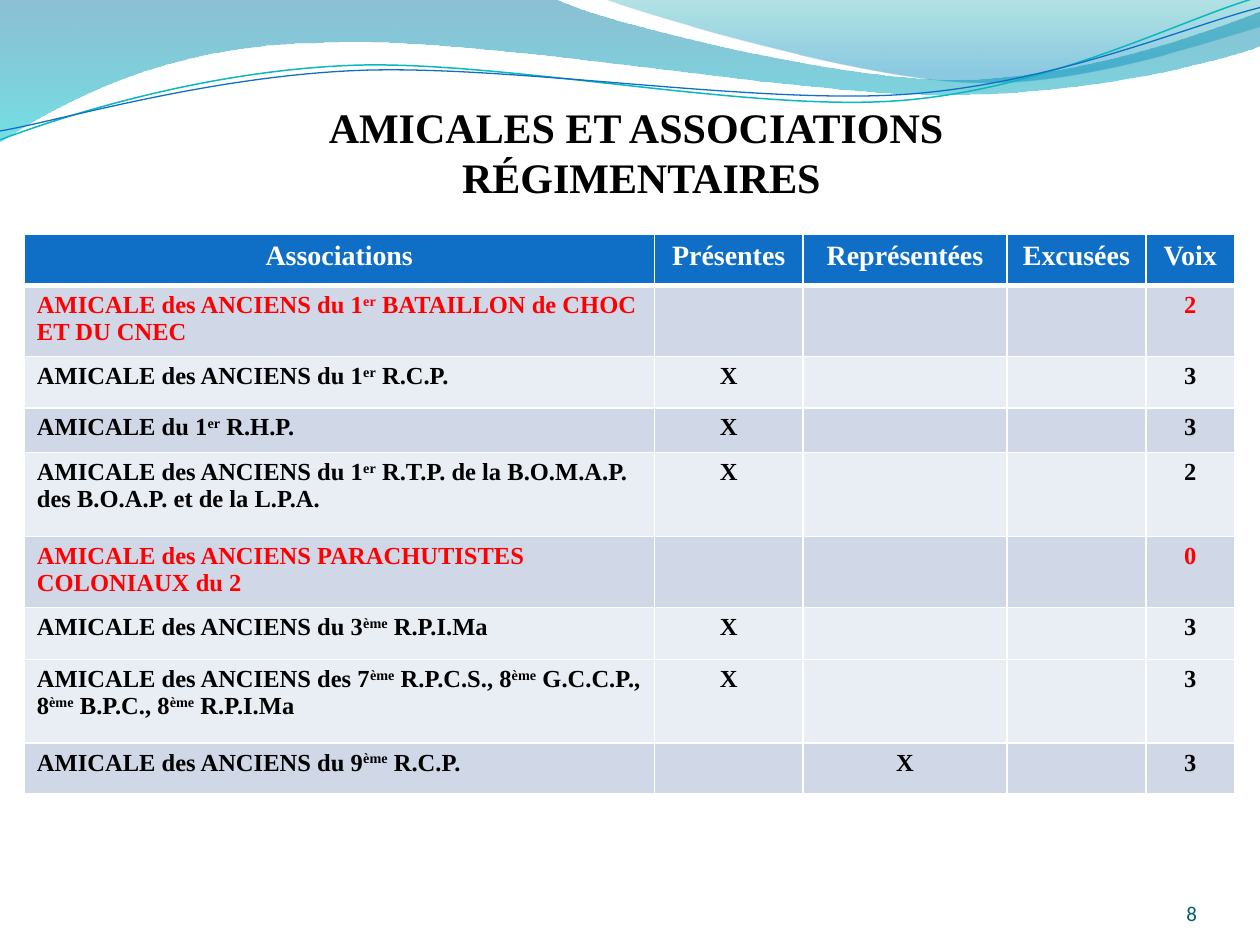
import pptx
import pptx.util
import pptx.dml.color
import pptx.enum.text
import pptx.oxml
import pptx.oxml.ns
from pptx.util import Cm

TITLE = ["AMICALES ET ASSOCIATIONS ", "RÉGIMENTAIRES"]
PAGE_NUMBER = "8"
HEADERS = ["Associations", "Présentes", "Représentées", "Excusées", "Voix"]
BLACK, RED, WHITE = "000000", "FF0000", "FFFFFF"
DARK_BAND, LIGHT_BAND, BLUE = "D0D8E8", "E9EDF4", "0F6FC6"
ASSOCIATIONS = [
    ("AMICALE des ANCIENS du 1^er^ BATAILLON de CHOC ET DU CNEC", None, "2", RED, DARK_BAND),
    ("AMICALE des ANCIENS du 1^er^ R.C.P.", "Présentes", "3", BLACK, LIGHT_BAND),
    ("AMICALE du 1^er^ R.H.P.", "Présentes", "3", BLACK, DARK_BAND),
    ("AMICALE des ANCIENS du 1^er^ R.T.P. de la B.O.M.A.P. des B.O.A.P. et de la L.P.A.",
     "Présentes", "2", BLACK, LIGHT_BAND),
    ("AMICALE des ANCIENS PARACHUTISTES COLONIAUX du 2", None, "0", RED, DARK_BAND),
    ("AMICALE des ANCIENS du 3^ème^ R.P.I.Ma", "Présentes", "3", BLACK, LIGHT_BAND),
    ("AMICALE des ANCIENS des 7^ème^ R.P.C.S., 8^ème^ G.C.C.P., 8^ème^ B.P.C., 8^ème^ R.P.I.Ma",
     "Présentes", "3", BLACK, LIGHT_BAND),
    ("AMICALE des ANCIENS du 9^ème^ R.C.P.", "Représentées", "3", BLACK, DARK_BAND),
]
COLUMN_WIDTHS = [12.7, 3, 4.11, 2.8, 1.79]
ROW_HEIGHTS = [1.03, 1.43, 1.03, 0.9, 1.7, 1.43, 1.04, 1.69, 1.03]

CURVE_UNIT = Cm(2.54)
WAVES = [
    ((0, -0.01),
     [[(4.4, -0.01)],
      [(4.76, 0.17), (6.64, 0.63), (7.58, 0.63)],
      [(8.53, 0.63), (9.58, 0.26), (10, 0.09)],
      [(10.01, 0.36)],
      [(9.83, 0.44), (8.7, 0.76), (7.46, 0.75)],
      [(6.22, 0.75), (3.82, 0.28), (2.57, 0.34)],
      [(1.29, 0.35), (0.46, 0.83), (-0.01, 1.13)],
      [(0, -0.01)]],
     [(0, "0074A1", 45), (1, "00C6CF", 55)]),
    ((4.79, -0.01),
     [[(5.09, 0.11), (6.82, 0.62), (7.69, 0.65)],
      [(8.56, 0.69), (9.61, 0.32), (10, 0.21)],
      [(10, 0)],
      [(4.79, -0.01)]],
     [(0, "00A1A9", 30), (0.8, "008BBF", 45)]),
]
STRANDS = [
    ((0, 1.11),
     [[(0.48, 0.93), (1.58, 0.57), (2.77, 0.52)],
      [(3.95, 0.47), (5.93, 0.89), (7.13, 0.8)],
      [(8.33, 0.71), (9.38, 0.15), (9.98, -0.02)]],
     "0AB8BF", 0.85),
    ((0, 1.04),
     [[(0.47, 0.96), (1.64, 0.61), (2.83, 0.56)],
      [(4.03, 0.51), (5.97, 0.83), (7.17, 0.75)],
      [(8.36, 0.67), (9.41, 0.21), (10, 0.06)]],
     BLUE, 0.75),
]


def color(value):
    return pptx.dml.color.RGBColor.from_string(value)


def add_curve(page, start, segments, close):
    corners = [(round(x * CURVE_UNIT), round(y * CURVE_UNIT))
               for x, y in [start, *sum(segments, [])]]
    builder = page.shapes.build_freeform(*corners[0])
    builder.add_line_segments(corners[1:], close=close)
    shape = builder.convert_to_shape()
    shape.shadow.inherit = False
    lines = iter(list(shape._element.iter(pptx.oxml.ns.qn("a:lnTo"))))
    for segment in segments:
        first, *others = [next(lines) for corner in segment]
        if others:
            bend = pptx.oxml.parse_xml(f'<a:cubicBezTo {pptx.oxml.ns.nsdecls("a")}/>')
            first.addprevious(bend)
            for line in (first, *others):
                bend.append(line[0])
                line.getparent().remove(line)
    return shape


def add_wave(page, start, segments, stops):
    wave = add_curve(page, start, segments, True)
    wave.line.fill.background()
    wave.fill.gradient()
    wave.fill.gradient_angle = 270
    for stop, (position, value, opacity) in zip(wave.fill.gradient_stops, stops):
        stop.position = position
        stop.color.rgb = color(value)
    tones = wave.fill._xPr.iter(pptx.oxml.ns.qn("a:srgbClr"))
    for tone, (position, value, opacity) in zip(tones, stops):
        tone.append(pptx.oxml.parse_xml(
            f'<a:alpha {pptx.oxml.ns.nsdecls("a")} val="{opacity * 1000}"/>'))


def add_strand(page, start, segments, value, width):
    strand = add_curve(page, start, segments, False)
    strand.fill.background()
    strand.line.color.rgb = color(value)
    strand.line.width = pptx.util.Pt(width)


def write(para, text, size, value, align, font="Times New Roman", bold=True):
    for index, piece in enumerate(text.split("^") if text else []):
        span = para.add_run()
        span.text = piece
        if index % 2:
            span._r.get_or_add_rPr().set("baseline", "30000")
    para.alignment = getattr(pptx.enum.text.PP_ALIGN, align)
    para.font.name = font
    para.font.size = pptx.util.Pt(size)
    para.font.bold = bold
    para.font.color.rgb = color(value)


def fill_cell(cell, text, size, value, align, band, widths):
    cell.fill.solid()
    cell.fill.fore_color.rgb = color(band)
    write(cell.text_frame.paragraphs[0], text, size, value, align)
    properties = cell._tc.get_or_add_tcPr()
    for index, (side, width) in enumerate(zip("LRTB", widths)):
        properties.insert(index, pptx.oxml.parse_xml(
            f'<a:ln{side} {pptx.oxml.ns.nsdecls("a")} w="{pptx.util.Pt(width)}">'
            f'<a:solidFill><a:srgbClr val="{WHITE}"/></a:solidFill></a:ln{side}>'))


def add_associations(page):
    frame = page.shapes.add_table(
        len(ROW_HEIGHTS), len(HEADERS), Cm(0.49), Cm(4.73),
        Cm(sum(COLUMN_WIDTHS)), Cm(sum(ROW_HEIGHTS)))
    table = frame.table
    for column, width in zip(table.columns, COLUMN_WIDTHS):
        column.width = Cm(width)
    for row, height in zip(table.rows, ROW_HEIGHTS):
        row.height = Cm(height)
    for index, header in enumerate(HEADERS):
        fill_cell(table.cell(0, index), header, 16, WHITE, "CENTER", BLUE, (1, 1, 1, 3))
    for line, (name, status, votes, value, band) in enumerate(ASSOCIATIONS, 1):
        marks = ["X" if header == status else "" for header in HEADERS[1:-1]]
        widths = (1, 1, 3 if line == 1 else 1, 1)
        for index, text in enumerate([name, *marks, votes]):
            align = "CENTER" if index else "LEFT"
            fill_cell(table.cell(line, index), text, 14, value, align, band, widths)


def add_title(page):
    box = page.shapes.add_textbox(Cm(1.13), Cm(1.92), Cm(23.6), Cm(2.31))
    box.text_frame.word_wrap = True
    for index, text in enumerate(TITLE):
        para = box.text_frame.add_paragraph() if index else box.text_frame.paragraphs[0]
        write(para, text, 24, BLACK, "CENTER")


def add_page_number(page):
    box = page.shapes.add_textbox(Cm(22.02), Cm(17.65), Cm(2.11), Cm(1.02))
    frame = box.text_frame
    frame.word_wrap = True
    frame.margin_left = frame.margin_right = frame.margin_top = frame.margin_bottom = 0
    frame.vertical_anchor = pptx.enum.text.MSO_ANCHOR.BOTTOM
    write(frame.paragraphs[0], PAGE_NUMBER, 12, "045C75", "RIGHT", "Calibri", False)


def main():
    deck = pptx.Presentation()
    deck.slide_width, deck.slide_height = Cm(25.4), Cm(19.05)
    page = deck.slides.add_slide(deck.slide_layouts[6])
    for wave in WAVES:
        add_wave(page, *wave)
    for strand in STRANDS:
        add_strand(page, *strand)
    add_associations(page)
    add_title(page)
    add_page_number(page)
    deck.save("out.pptx")


if __name__ == "__main__":
    main()
